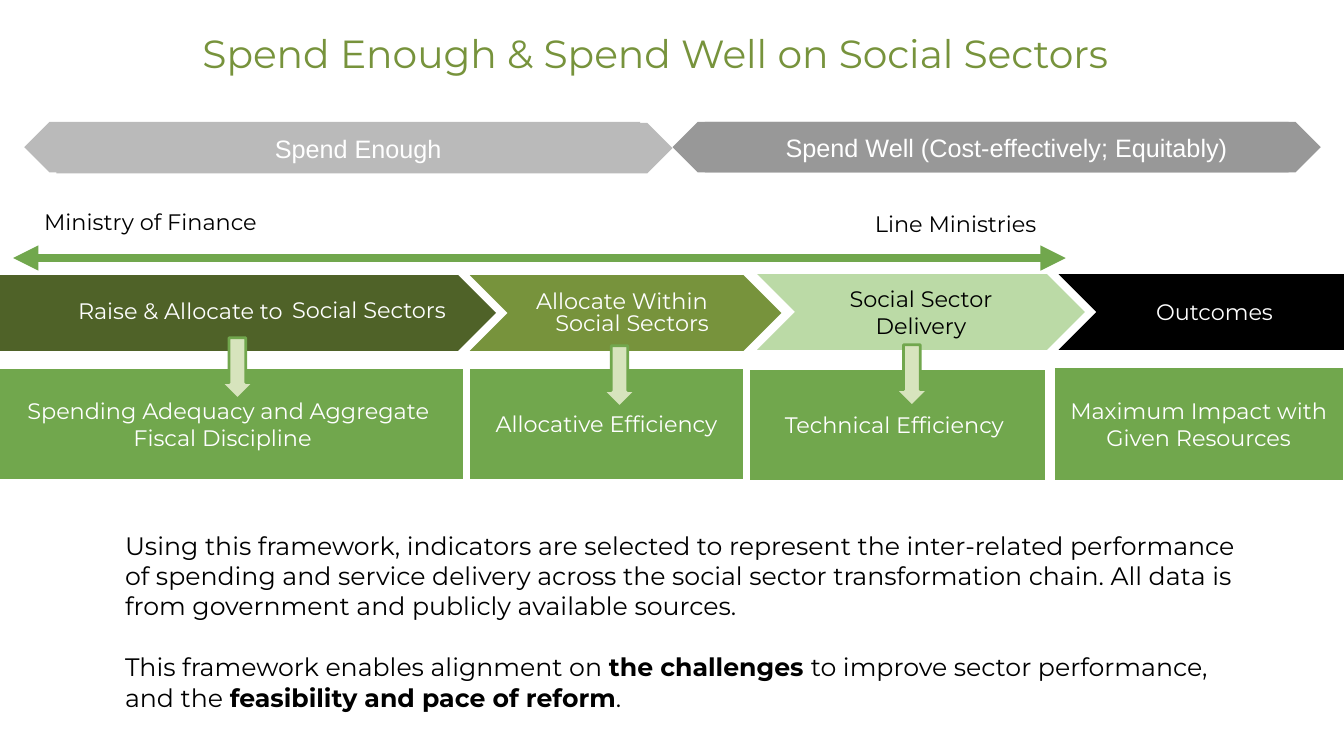
from dataclasses import dataclass

from lxml.etree import SubElement
from pptx import Presentation
from pptx.dml.color import RGBColor
from pptx.enum.shapes import MSO_CONNECTOR, MSO_SHAPE as Shape
from pptx.enum.text import MSO_ANCHOR as Anchor, MSO_AUTO_SIZE as AutoSize, PP_ALIGN as Align
from pptx.oxml.ns import qn
from pptx.util import Inches, Pt


@dataclass(frozen=True)
class Theme:
    font: str = "Montserrat"
    banner_font: str = "Arial"
    title_size: int = 28
    body_size: int = 18
    label_size: int = 16
    black: str = "000000"
    white: str = "FFFFFF"
    dark_green: str = "4F6228"
    olive: str = "77933C"
    pale_green: str = "BBDAA6"
    green: str = "71A74D"
    arrow_green: str = "D7E4BD"
    light_gray: str = "BABABA"
    gray: str = "989898"


theme = Theme()


def write(holder, text, color, size=theme.label_size, font=theme.font, align=Align.CENTER):
    """Put one styled paragraph into a shape, text box or placeholder."""
    holder.text_frame.word_wrap = True
    holder.text_frame.text = text
    paragraph = holder.text_frame.paragraphs[0]
    paragraph.alignment = align
    paragraph.font.name = font
    paragraph.font.size = Pt(size)
    paragraph.font.color.rgb = RGBColor.from_string(color)


def add_block(preset, left, top, width, height, fill):
    """Add a flat, borderless preset shape."""
    block = slide.shapes.add_shape(
        preset, Inches(left), Inches(top), Inches(width), Inches(height))
    block.shadow.inherit = False
    block.fill.solid()
    block.fill.fore_color.rgb = RGBColor.from_string(fill)
    block.line.fill.background()
    block.text_frame.vertical_anchor = Anchor.MIDDLE
    return block


presentation = Presentation()
presentation.slide_width = Inches(13.33)
presentation.slide_height = Inches(7.5)
slide = presentation.slides.add_slide(presentation.slide_layouts[1])

# Title
title = slide.shapes.title
title.left, title.top = Inches(0.3), Inches(0.24)
title.width, title.height = Inches(12.4), Inches(0.57)
write(title, "Spend Enough & Spend Well on Social Sectors", theme.olive, theme.title_size)
title.text_frame.vertical_anchor = Anchor.TOP

# Explanation of the framework
explanation = slide.placeholders[1]
explanation.left, explanation.top = Inches(1.14), Inches(5.21)
explanation.width, explanation.height = Inches(11.36), Inches(1.92)
frame = explanation.text_frame
frame.auto_size = AutoSize.NONE
frame.vertical_anchor = Anchor.TOP
statements = [
    [("Using this framework, indicators are selected to represent the inter-related "
      "performance of spending and service delivery across the social sector "
      "transformation chain. All data is from government and publicly available "
      "sources.", False)],
    [("This framework enables alignment on ", False), ("the challenges ", True),
     ("to improve sector performance, and the ", False),
     ("feasibility and pace of reform", True), (".", False)],
]
for number, statement in enumerate(statements):
    paragraph = frame.add_paragraph() if number else frame.paragraphs[0]
    paragraph.space_before = Pt(22 * number)
    paragraph.font.name = theme.font
    paragraph.font.size = Pt(theme.body_size)
    paragraph.font.color.rgb = RGBColor.from_string(theme.black)
    properties = paragraph._p.get_or_add_pPr()
    properties.set("marL", "0")
    properties.set("indent", "0")
    bullet_off = properties.makeelement(qn("a:buNone"), {})
    properties.insert_element_before(bullet_off, "a:tabLst", "a:defRPr", "a:extLst")
    for text, bold in statement:
        run = paragraph.add_run()
        run.text = text
        run.font.bold = bold

# Two-headed banners, each made of two opposed pentagons
banners = [
    (0.24, 1.22, "Spend Enough", theme.light_gray),
    (6.67, 1.21, "Spend Well (Cost-effectively; Equitably)", theme.gray),
]
for left, top, text, fill in banners:
    add_block(Shape.PENTAGON, left, 1.21, 6.11, 0.5, fill).rotation = 180
    right_half = add_block(Shape.PENTAGON, left + 0.32, top, 6.11, 0.5, fill)
    write(right_half, text, theme.white, theme.body_size, theme.banner_font)

# Transformation chain
stages = [
    (-0.41, 2.73, 5.33, theme.dark_green, ""),
    (4.66, 2.73, 3.09, theme.olive, ""),
    (7.51, 2.72, 3.25, theme.pale_green, "Social Sector Delivery"),
    (10.5, 2.72, 3.25, theme.black, ""),
]
for left, top, width, fill, text in stages:
    stage = add_block(Shape.CHEVRON, left, top, width, 0.75, fill)
    if text:
        write(stage, text, theme.black)

# Goal under each stage
goals = [
    (-0.06, 3.66, 4.65, 1.09, "Spending Adequacy and Aggregate Fiscal Discipline  "),
    (4.66, 3.66, 2.71, 1.09, "Allocative Efficiency"),
    (7.44, 3.67, 2.92, 1.09, "Technical Efficiency "),
    (10.46, 3.65, 2.86, 1.11, "Maximum Impact with Given Resources"),
]
for left, top, width, height, text in goals:
    goal = add_block(Shape.FLOWCHART_PROCESS, left, top, width, height, theme.green)
    write(goal, text, theme.white)

for left, top in [(2.19, 3.35), (5.98, 3.43), (8.88, 3.42)]:
    stage_to_goal = add_block(Shape.DOWN_ARROW, left, top, 0.33, 0.61, theme.arrow_green)
    stage_to_goal.line.color.rgb = RGBColor.from_string(theme.green)
    stage_to_goal.line.width = Pt(2)

# Labels over the chain and the ministries above it
labels = [
    (2.8, 2.89, 2.6, "Social Sectors", theme.white, Align.LEFT),
    (0.56, 2.9, 2.46, "Raise & Allocate to", theme.white, Align.CENTER),
    (4.94, 2.8, 2.46, "Allocate Within", theme.white, Align.CENTER),
    (5.41, 3.02, 2.35, "Social Sectors", theme.white, Align.LEFT),
    (11.32, 2.91, 1.51, "Outcomes ", theme.white, Align.CENTER),
    (0.34, 2.02, 2.34, "Ministry of Finance", theme.black, Align.LEFT),
    (8.58, 2.04, 1.87, "Line Ministries", theme.black, Align.LEFT),
]
for left, top, width, text, color, align in labels:
    label = slide.shapes.add_textbox(Inches(left), Inches(top), Inches(width), Inches(0.37))
    write(label, text, color, align=align)

# Span of responsibility between the ministries
span = slide.shapes.add_connector(
    MSO_CONNECTOR.STRAIGHT, Inches(0.13), Inches(2.56), Inches(10.57), Inches(2.56))
span.line.color.rgb = RGBColor.from_string(theme.green)
span.line.width = Pt(6)
outline = span.line._get_or_add_ln()
for end in ("a:headEnd", "a:tailEnd"):
    SubElement(outline, qn(end), type="triangle")
SubElement(span._element.spPr, qn("a:effectLst"))

presentation.save("out.pptx")
